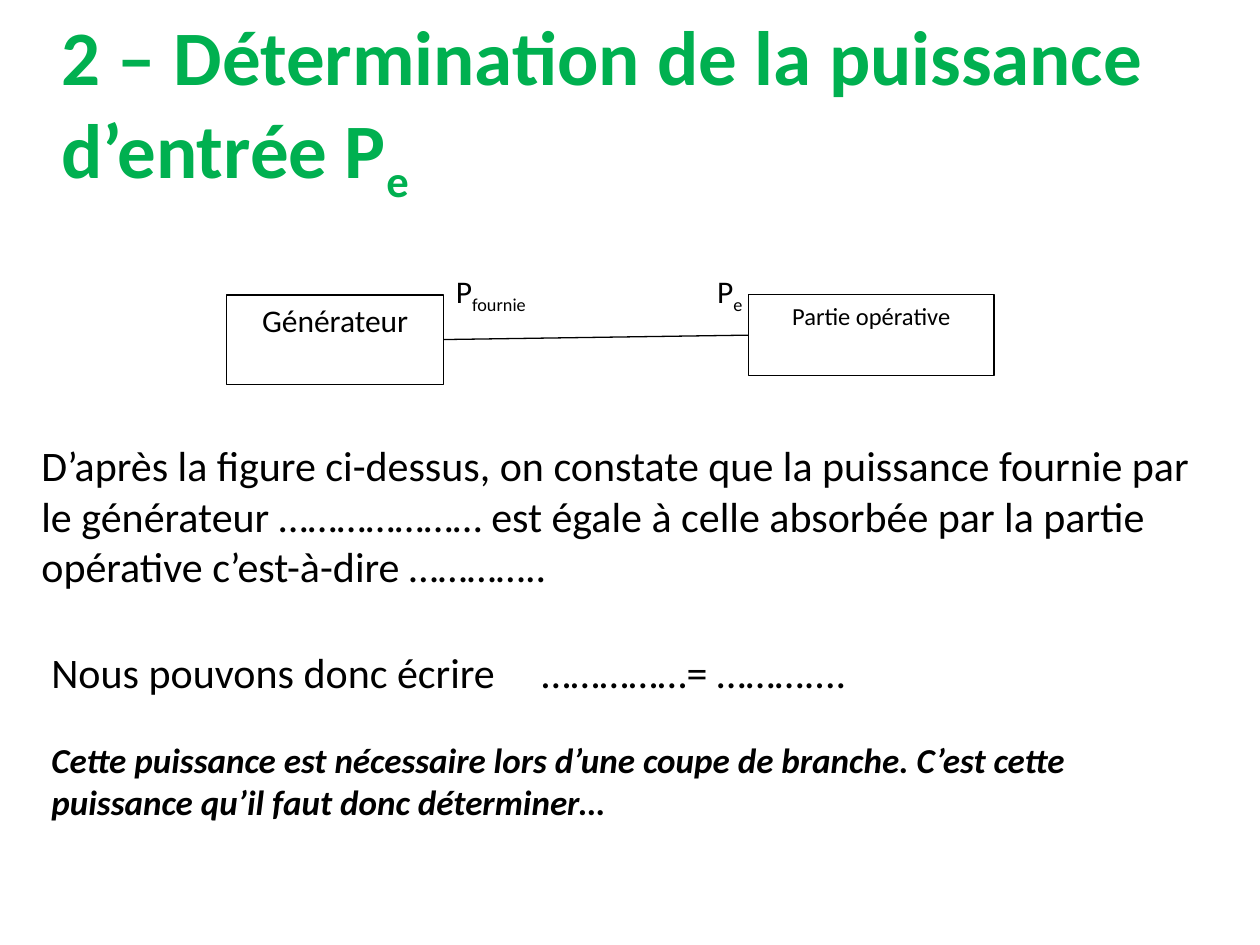
import dataclasses

import pptx
import pptx.dml.color
import pptx.enum.shapes
import pptx.enum.text
import pptx.oxml.ns
import pptx.util
from lxml import etree

COLORS = {"title": "00B050", "ink": "000000"}
FONT = "Calibri"
CELL = 0.25  # inches: the slide is a grid of 40 columns by 30 rows
ALIGN = pptx.enum.text.PP_ALIGN
ANCHOR = pptx.enum.text.MSO_ANCHOR


@dataclasses.dataclass
class Box:
    """An area in grid columns and rows."""
    left: float
    top: float
    width: float
    height: float

    def inner(self, left, top, width, height):
        return Box(self.left + left, self.top + top, width, height)

    def lengths(self):
        return [cells(n) for n in (self.left, self.top, self.width, self.height)]


def cells(count):
    return pptx.util.Inches(count * CELL)


def color(name):
    return pptx.dml.color.RGBColor.from_string(COLORS[name])


def add_text(frame, text, size, sub="", ink="ink", bold=False, italic=False,
             align=ALIGN.LEFT, before=0, tab=None):
    """Write one paragraph, with an optional subscript at its end."""
    para = frame.paragraphs[0]
    if para.runs:
        para = frame.add_paragraph()
    para.alignment = align
    para.space_before = pptx.util.Pt(before)
    if tab:
        tabs = etree.SubElement(para._p.get_or_add_pPr(), pptx.oxml.ns.qn("a:tabLst"))
        etree.SubElement(tabs, pptx.oxml.ns.qn("a:tab"), pos=str(cells(tab)), algn="l")
    for part, baseline in ((text, None), (sub, "-25000")):
        if not part:
            continue
        span = para.add_run()
        span.text = part
        span.font.name = FONT
        span.font.size = pptx.util.Pt(size)
        span.font.bold = bold
        span.font.italic = italic
        span.font.color.rgb = color(ink)
        if baseline:
            span.font._element.set("baseline", baseline)


def text_area(page, box, anchor=ANCHOR.TOP):
    frame = page.shapes.add_textbox(*box.lengths()).text_frame
    frame.word_wrap = True
    frame.vertical_anchor = anchor
    return frame


def add_block(page, box, label, size):
    block = page.shapes.add_shape(pptx.enum.shapes.MSO_SHAPE.RECTANGLE, *box.lengths())
    block.shadow.inherit = False
    block.fill.background()
    block.line.color.rgb = color("ink")
    block.line.width = pptx.util.Pt(0.75)
    block.text_frame.word_wrap = True
    block.text_frame.vertical_anchor = ANCHOR.TOP
    add_text(block.text_frame, label, size, align=ALIGN.CENTER)


def add_link(page, start, end):
    link = page.shapes.add_connector(
        pptx.enum.shapes.MSO_CONNECTOR.STRAIGHT, *[cells(n) for n in (*start, *end)])
    link.line.color.rgb = color("ink")
    link.line.width = pptx.util.Pt(0.75)
    etree.SubElement(link._element.spPr, pptx.oxml.ns.qn("a:effectLst"))


def add_title(page, box):
    add_text(text_area(page, box, ANCHOR.MIDDLE),
             "2 – Détermination de la puissance d’entrée P", 44,
             sub="e", ink="title", bold=True)


def add_power_diagram(page, box):
    generator = box.inner(0, 0.92, 6.88, 2.84)
    operative = box.inner(16.56, 0.92, 7.8, 2.56)
    add_block(page, generator, "Générateur", 18)
    add_block(page, operative, "Partie opérative", 14)
    add_text(text_area(page, box.inner(6.88, 0, 5.64, 1.6)), "P", 18, sub="fournie")
    add_text(text_area(page, box.inner(11.56, 0, 5.2, 1.6)), "P", 18, sub="e",
             align=ALIGN.RIGHT)
    add_link(page,
             (generator.left + generator.width, generator.top + generator.height / 2),
             (operative.left, operative.top + operative.height / 2))


def add_observation(page, box):
    add_text(text_area(page, box),
             "D’après la figure ci-dessus, on constate que la puissance fournie par "
             "le générateur ………………… est égale à celle absorbée par la partie "
             "opérative c’est-à-dire …………..", 24)


def add_conclusion(page, box):
    frame = text_area(page, box)
    add_text(frame, "Nous pouvons donc écrire\t……………= ………....", 24, tab=15.56)
    add_text(frame,
             "Cette puissance est nécessaire lors d’une coupe de branche. "
             "C’est cette puissance qu’il faut donc déterminer…", 20,
             bold=True, italic=True, before=24)


def main():
    deck = pptx.Presentation()
    deck.slide_width, deck.slide_height = cells(40), cells(30)
    page = deck.slides.add_slide(deck.slide_layouts[6])
    add_title(page, Box(1.56, 0.92, 36, 5))
    add_observation(page, Box(0.92, 13.76, 37.8, 5.24))
    add_conclusion(page, Box(1.24, 20.32, 34.68, 7.28))
    add_power_diagram(page, Box(7.2, 8.44, 24.36, 3.76))
    deck.save("out.pptx")


if __name__ == "__main__":
    main()
